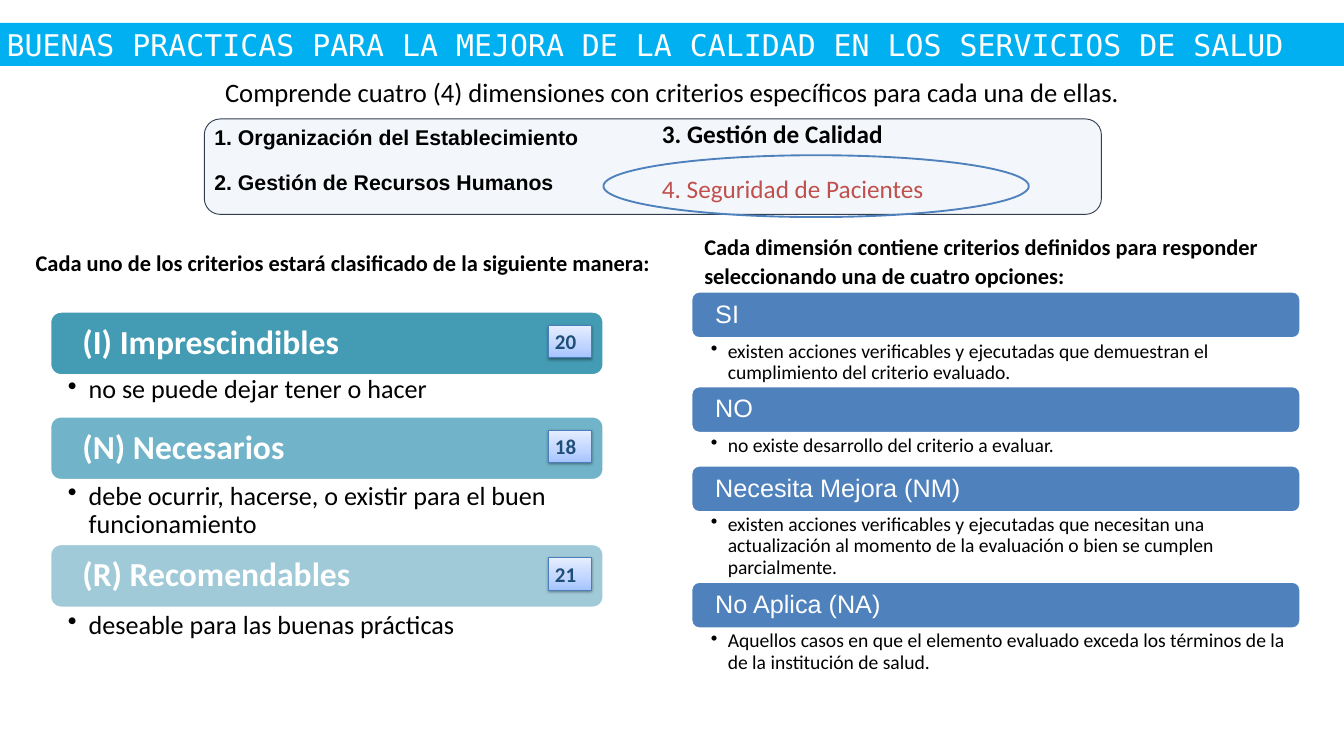
from dataclasses import dataclass

from lxml import etree
from pptx import Presentation
from pptx.dml.color import RGBColor
from pptx.enum.shapes import MSO_SHAPE
from pptx.enum.text import MSO_ANCHOR, PP_ALIGN
from pptx.oxml.ns import qn
from pptx.util import Inches, Pt

RECTANGLE = MSO_SHAPE.RECTANGLE
ROUNDED = MSO_SHAPE.ROUNDED_RECTANGLE
ELLIPSE = MSO_SHAPE.OVAL
TOP, MIDDLE = MSO_ANCHOR.TOP, MSO_ANCHOR.MIDDLE
LEFT, CENTER = PP_ALIGN.LEFT, PP_ALIGN.CENTER

BLACK, WHITE, BLUE = "000000", "FFFFFF", "4F81BD"
WIDE_INSETS = (0.15, 0.07, 0.15, 0.07)
BADGE_STOPS = ((0, "A4C4FF"), (35, "BFD4FF"), (100, "E6EEFF"))


@dataclass
class Entry:
    title: str
    detail: str
    bar_top: float
    detail_top: float
    detail_height: float
    fill: str = BLUE
    count: str = ""


@dataclass
class ListStyle:
    left: float
    width: float
    bar_height: float
    bar_inset: float
    title_size: float
    title_font: str
    title_bold: bool
    detail_size: float
    detail_insets: tuple
    hanging: float


def color(value: str) -> RGBColor:
    return RGBColor.from_string(value)


def set_frame(shape, insets=(0.1, 0.05, 0.1, 0.05), anchor=TOP):
    frame = shape.text_frame
    frame.word_wrap = True
    frame.vertical_anchor = anchor
    (frame.margin_left, frame.margin_top,
     frame.margin_right, frame.margin_bottom) = map(Inches, insets)


def add_box(slide, kind, at, fill=None, line=None, line_width=1.0):
    shape = slide.shapes.add_shape(kind, *map(Inches, at))
    shape.shadow.inherit = False
    if fill:
        shape.fill.solid()
        shape.fill.fore_color.rgb = color(fill)
    else:
        shape.fill.background()
    if line:
        shape.line.color.rgb = color(line)
        shape.line.width = Pt(line_width)
    else:
        shape.line.fill.background()
    set_frame(shape)
    return shape


def add_text_area(slide, at, insets=WIDE_INSETS):
    box = slide.shapes.add_textbox(*map(Inches, at))
    set_frame(box, insets)
    return box


def write(shape, text: str, *, size: float, font="Calibri", fill=BLACK, bold=False,
          align=LEFT, spacing=1.0, before=0.0, hanging=0.0):
    """Fill the empty first paragraph, or append another one."""
    frame = shape.text_frame
    paragraph = frame.add_paragraph() if frame.text else frame.paragraphs[0]
    paragraph.alignment = align
    paragraph.line_spacing = spacing
    if before:
        paragraph.space_before = Pt(before)
    if hanging:
        properties = paragraph._p.get_or_add_pPr()
        properties.set("marL", str(Inches(hanging)))
        properties.set("indent", str(-Inches(hanging)))
        etree.SubElement(properties, qn("a:buChar")).set("char", "•")
    run = paragraph.add_run()
    run.text = text
    run.font.size = Pt(size)
    run.font.name = font
    run.font.bold = bold
    run.font.color.rgb = color(fill)


def add_color_node(parent, value: str):
    node = etree.SubElement(parent, qn("a:srgbClr"))
    node.set("val", value)
    return node


def add_badge(slide, left: float, top: float, count: str):
    badge = add_box(slide, RECTANGLE, (left, top, 0.64, 0.48), line="4B7EBC", line_width=0.75)
    badge.fill.gradient()
    badge.fill.gradient_angle = 90
    properties = badge._element.spPr
    stops = properties.find(qn("a:gradFill")).find(qn("a:gsLst"))
    for stop in list(stops):
        stops.remove(stop)
    for position, value in BADGE_STOPS:
        stop = etree.SubElement(stops, qn("a:gs"))
        stop.set("pos", str(position * 1000))
        add_color_node(stop, value)
    shadow = etree.SubElement(properties.find(qn("a:effectLst")), qn("a:outerShdw"))
    for name, value in (("blurRad", Pt(3.1)), ("dist", Pt(1.6)), ("dir", 90 * 60000)):
        shadow.set(name, str(value))
    etree.SubElement(add_color_node(shadow, BLACK), qn("a:alpha")).set("val", "38000")
    write(badge, count, size=22.5, fill="1F4E79", bold=True)


def add_list(slide, entries: list[Entry], style: ListStyle):
    for entry in entries:
        bar = add_box(slide, ROUNDED, (style.left, entry.bar_top, style.width, style.bar_height),
                      entry.fill, WHITE, 2)
        set_frame(bar, (style.bar_inset, 0.1, 0.1, 0.1), MIDDLE)
        write(bar, entry.title, size=style.title_size, font=style.title_font, fill=WHITE,
              bold=style.title_bold, spacing=0.9)
        detail = add_text_area(
            slide, (style.left, entry.detail_top, style.width, entry.detail_height),
            style.detail_insets)
        write(detail, entry.detail, size=style.detail_size, spacing=0.9, hanging=style.hanging)
        if entry.count:
            add_badge(slide, style.left + 7.41, entry.bar_top + 0.2, entry.count)


CRITERIA = [
    Entry("(I) Imprescindibles", "no se puede dejar tener o hacer",
          4.64, 5.55, 0.65, "449CB4", "20"),
    Entry("(N) Necesarios", "debe ocurrir, hacerse, o existir para el buen funcionamiento",
          6.2, 7.14, 0.96, "71B3C8", "18"),
    Entry("(R) Recomendables", "deseable para las buenas prácticas",
          8.1, 9.05, 0.65, "A1CAD9", "21"),
]
ANSWERS = [
    Entry("SI", "existen acciones verificables y ejecutadas que demuestran el cumplimiento "
          "del criterio evaluado.", 4.34, 5.04, 0.72),
    Entry("NO", "no existe desarrollo del criterio a evaluar.", 5.75, 6.44, 0.49),
    Entry("Necesita Mejora (NM)", "existen acciones verificables y ejecutadas que necesitan una "
          "actualización al momento de la evaluación o bien se cumplen parcialmente.",
          6.93, 7.62, 1.04),
    Entry("No Aplica (NA)", "Aquellos casos en que el elemento evaluado exceda los términos "
          "de la de la institución de salud.", 8.66, 9.35, 0.72),
]
CRITERIA_STYLE = ListStyle(0.75, 8.23, 0.94, 0.43, 36, "Calibri", True,
                           28, (0.26, 0.05, 0.28, 0.05), 0.31)
ANSWER_STYLE = ListStyle(10.29, 9.06, 0.69, 0.32, 27, "Arial", False,
                         21, (0.29, 0.04, 0.21, 0.04), 0.25)


def main():
    presentation = Presentation()
    presentation.slide_width = Inches(20)
    presentation.slide_height = Inches(11.25)
    slide = presentation.slides.add_slide(presentation.slide_layouts[6])

    # Title band and introduction
    title = add_box(slide, RECTANGLE, (0, 0.34, 20, 0.64), "00B0F0")
    write(title, "BUENAS PRACTICAS PARA LA MEJORA DE LA CALIDAD EN LOS SERVICIOS DE SALUD",
          size=32, font="DejaVu Sans Mono", fill=WHITE)
    introduction = add_text_area(slide, (2.44, 1.03, 15.12, 0.64))
    write(introduction, "Comprende cuatro (4) dimensiones con criterios específicos "
          "para cada una de ellas.", size=28.5, align=CENTER, spacing=1.07)

    # The four dimensions
    add_box(slide, ROUNDED, (3.04, 1.77, 13.35, 1.42), "F3F7FB", "333F50")
    first_pair = add_text_area(slide, (3.04, 1.83, 6.33, 1.44))
    for text, before in (("1. Organización del Establecimiento", 0),
                         ("2. Gestión de Recursos Humanos", 24)):
        write(first_pair, text, size=22.8, font="Arial", bold=True, spacing=0.87, before=before)

    # Headings of the two lists
    for text, at in (
        ("Cada dimensión contiene criterios definidos para responder seleccionando una "
         "de cuatro opciones:", (10.33, 3.37, 8.92, 1.24)),
        ("Cada uno de los criterios estará clasificado de la siguiente manera:",
         (0.38, 3.61, 9.81, 1.07)),
    ):
        heading = add_box(slide, RECTANGLE, at, WHITE)
        set_frame(heading, WIDE_INSETS)
        write(heading, text, size=24, bold=True, spacing=1.07)

    # Remaining dimensions, the last one circled
    second_pair = add_text_area(slide, (9.7, 1.66, 6.91, 2.01))
    write(second_pair, "3. Gestión de Calidad", size=27, bold=True, spacing=1.07)
    write(second_pair, "4. Seguridad de Pacientes", size=27, fill="C0504D",
          spacing=1.07, before=24)
    add_box(slide, ELLIPSE, (8.98, 2.31, 6.33, 0.92), line=BLUE, line_width=2)

    # Answer options and classes of criteria
    add_list(slide, ANSWERS, ANSWER_STYLE)
    add_list(slide, CRITERIA, CRITERIA_STYLE)

    presentation.save("out.pptx")


if __name__ == "__main__":
    main()
